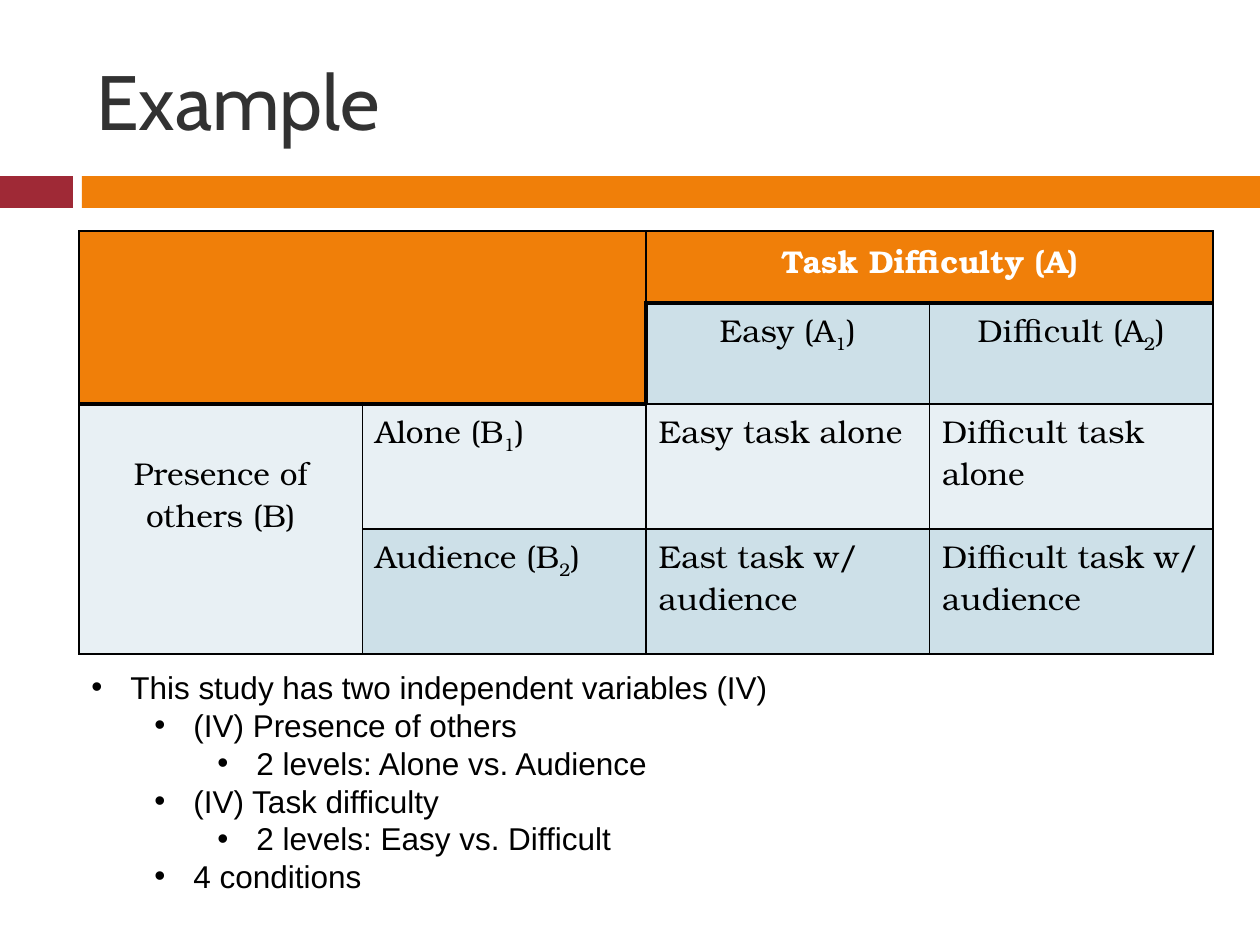
import pptx
import pptx.dml.color
import pptx.enum.shapes
import pptx.enum.text
import pptx.oxml
import pptx.oxml.ns
import pptx.util

SCALE = 914400 / 126
COLORS = {"red": "9F2936", "orange": "F07F09", "title": "323232", "black": "000000",
          "white": "FFFFFF", "blue": "CDE0E8", "pale": "E8F0F4"}
ALIGN = pptx.enum.text.PP_ALIGN
TABLE_FONT = "TeX Gyre Bonum"

CELLS = [
    (0, 0, "", "orange", {}),
    (0, 2, "Task Difficulty (A)", "orange", {"color": "white", "bold": True, "align": ALIGN.CENTER}),
    (1, 2, "Easy (A|1|)", "blue", {"align": ALIGN.CENTER}),
    (1, 3, "Difficult (A|2|)", "blue", {"align": ALIGN.CENTER}),
    (2, 0, "Presence of others (B)", "pale", {"align": ALIGN.CENTER, "top": 48}),
    (2, 1, "Alone (B|1|)", "pale", {}),
    (2, 2, "Easy task alone", "pale", {}),
    (2, 3, "Difficult task alone", "pale", {}),
    (3, 1, "Audience (B|2|)", "blue", {}),
    (3, 2, "East task w/ audience", "blue", {}),
    (3, 3, "Difficult task w/ audience", "blue", {}),
]
MERGES = [((0, 0), (1, 1)), ((0, 2), (0, 3)), ((2, 0), (3, 0))]
THICK = {(0, 0): "B", (0, 2): "B", (0, 3): "B", (1, 0): "B", (1, 1): "B",
         (1, 2): "LT", (1, 3): "T", (2, 0): "T", (2, 1): "T"}
BULLETS = [
    (0, "This study has two independent variables (IV)"),
    (1, "(IV) Presence of others"),
    (2, "2 levels: Alone vs. Audience"),
    (1, "(IV) Task difficulty"),
    (2, "2 levels: Easy vs. Difficult"),
    (1, "4 conditions"),
]


def px(length):
    """Turn pixels into EMU."""
    return round(length * SCALE)


def rgb(name):
    """Look up a named colour."""
    return pptx.dml.color.RGBColor.from_string(COLORS[name])


def add_run(paragraph, text, color, **format_values):
    """Add one formatted run."""
    run = paragraph.add_run()
    run.text = text
    run.font.color.rgb = rgb(color)
    for name, value in format_values.items():
        setattr(run.font, name, value)
    return run


def add_bar(slide, left, width, color):
    """Add a section of the bar under the title."""
    shape = slide.shapes.add_shape(pptx.enum.shapes.MSO_SHAPE.RECTANGLE,
                                   px(left), px(176), px(width), px(32))
    shape.shadow.inherit = False
    shape.fill.solid()
    shape.fill.fore_color.rgb = rgb(color)
    shape.line.fill.background()


def add_text_box(slide, *box, **frame_values):
    """Add a wrapping text box and return its frame."""
    frame = slide.shapes.add_textbox(*map(px, box)).text_frame
    for name, value in {"word_wrap": True, **frame_values}.items():
        setattr(frame, name, value)
    return frame


def set_borders(cell, thick_sides):
    """Draw black borders, heavier on the thick sides."""
    properties = cell._tc.get_or_add_tcPr()
    for side in "LRTB":
        width = pptx.util.Pt(3 if side in thick_sides else 1)
        properties.append(pptx.oxml.parse_xml(
            f'<a:ln{side} {pptx.oxml.ns.nsdecls("a")} w="{width}"><a:solidFill>'
            f'<a:srgbClr val="{COLORS["black"]}"/></a:solidFill></a:ln{side}>'))


def fill_cell(cell, text, fill, color="black", bold=False, align=ALIGN.LEFT, top=6):
    """Fill a cell and write its text, with subscripts between bars."""
    cell.fill.solid()
    cell.fill.fore_color.rgb = rgb(fill)
    cell.margin_top = px(top)
    paragraph = cell.text_frame.paragraphs[0]
    paragraph.alignment = align
    for index, part in enumerate(text.split("|") if text else []):
        run = add_run(paragraph, part, color, size=pptx.util.Pt(18), name=TABLE_FONT, bold=bold)
        if index % 2:
            run._r.get_or_add_rPr().set("baseline", "-25000")


def add_design_table(slide):
    """Add the two-by-two design table."""
    heights = [72, 101, 125, 125]
    table = slide.shapes.add_table(4, 4, px(79), px(231), px(1134), px(sum(heights))).table
    for column in table.columns:
        column.width = px(1134 / 4)
    for row, height in zip(table.rows, heights):
        row.height = px(height)
    for row in range(4):
        for column in range(4):
            set_borders(table.cell(row, column), THICK.get((row, column), ""))
    for first, last in MERGES:
        table.cell(*first).merge(table.cell(*last))
    for row, column, text, fill, options in CELLS:
        fill_cell(table.cell(row, column), text, fill, **options)


def add_bullets(frame):
    """Write the bulleted outline."""
    for index, (level, text) in enumerate(BULLETS):
        paragraph = frame.add_paragraph() if index else frame.paragraphs[0]
        paragraph.level = level
        paragraph.line_spacing = pptx.util.Pt(21.6)
        properties = paragraph._p.get_or_add_pPr()
        properties.set("marL", str(px(39 + 63 * level)))
        properties.set("indent", str(px(-39)))
        for tag in ('buFont typeface="Arial"', 'buChar char="•"'):
            properties.append(pptx.oxml.parse_xml(f'<a:{tag} {pptx.oxml.ns.nsdecls("a")}/>'))
        add_run(paragraph, text, "black", size=pptx.util.Pt(18), name="Arial")


def main():
    """Build and save the slide."""
    presentation = pptx.Presentation()
    presentation.slide_width, presentation.slide_height = px(1260), px(945)
    slide = presentation.slides.add_slide(presentation.slide_layouts[6])
    add_bar(slide, 0, 73, "red")
    add_bar(slide, 82, 1178, "orange")
    title = add_text_box(slide, 84, 32, 1124, 136,
                         vertical_anchor=pptx.enum.text.MSO_ANCHOR.MIDDLE)
    add_run(title.paragraphs[0], "Example", "title", size=pptx.util.Pt(44), name="Cabin")
    add_design_table(slide)
    add_bullets(add_text_box(slide, 79, 662, 1134, 242,
                             auto_size=pptx.enum.text.MSO_AUTO_SIZE.SHAPE_TO_FIT_TEXT))
    presentation.save("out.pptx")


if __name__ == "__main__":
    main()
